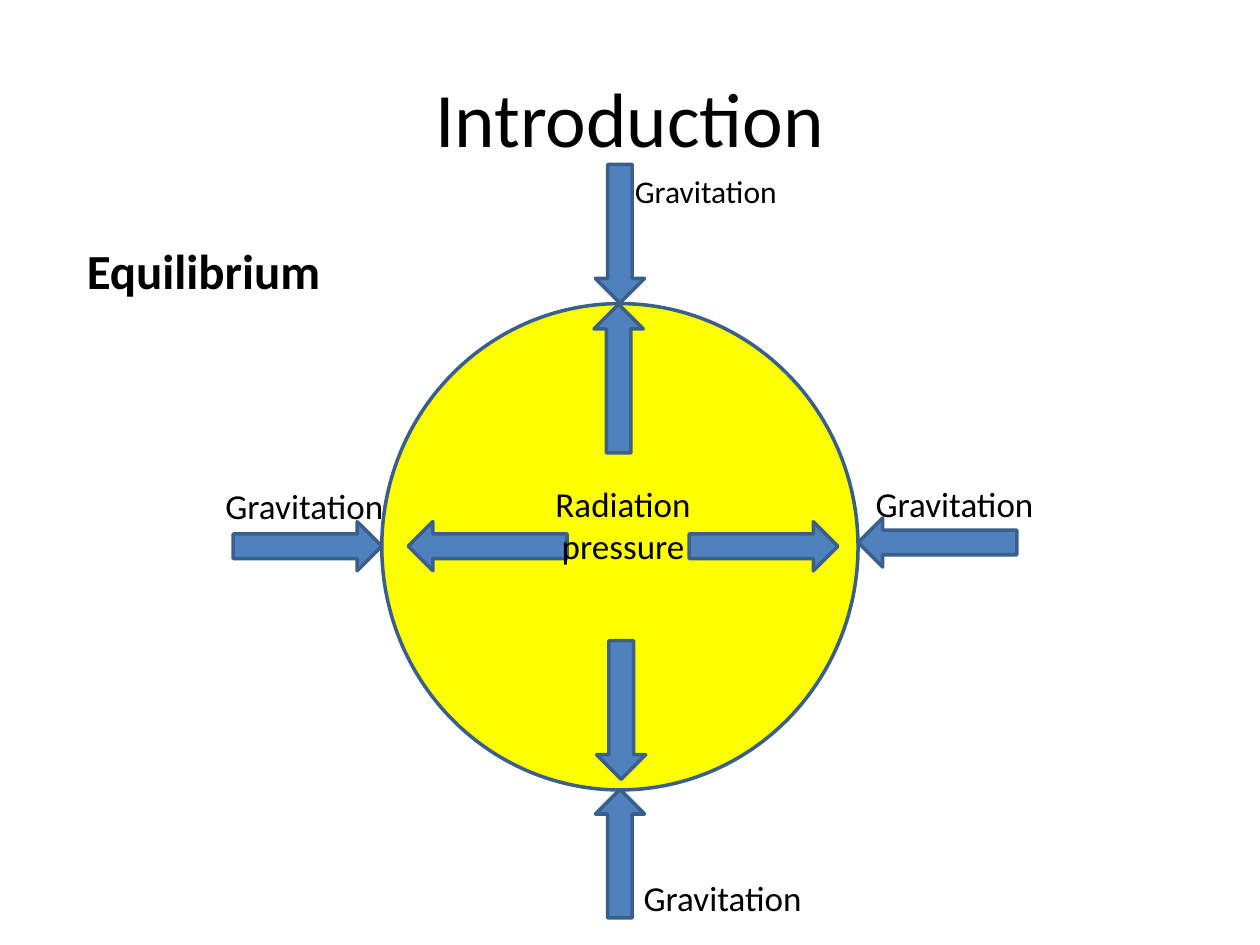
from dataclasses import dataclass

from pptx import Presentation
from pptx.dml.color import RGBColor
from pptx.enum.shapes import MSO_SHAPE as Shape
from pptx.enum.text import MSO_ANCHOR as Anchor, PP_ALIGN as Align
from pptx.util import Inches, Pt

COLORS = {"text": "000000", "star": "FFFF00", "arrow": "4F81BD", "outline": "3A5F8C"}
FONT = "Calibri"
ARROW_THICKNESS = 0.39
LABEL_WIDTH = 1.81


@dataclass
class Arrow:
    left: float
    top: float
    length: float
    rotation: int = 0


@dataclass
class Label:
    text: str
    left: float
    top: float
    width: float = LABEL_WIDTH
    height: float = 0.44
    size: int = 20
    bold: bool = False
    align: Align = Align.LEFT
    anchor: Anchor = Anchor.TOP


GRAVITATION_ARROWS = [
    Arrow(1.85, 4.14, 1.18),
    Arrow(4.41, 6.58, 1.02, 270),
    Arrow(4.37, 1.66, 1.1, 90),
    Arrow(6.81, 4.11, 1.26, 180),
]
RADIATION_ARROWS = [
    Arrow(5.47, 4.14, 1.18),
    Arrow(4.38, 5.44, 1.1, 90),
    Arrow(3.24, 4.14, 1.26, 180),
    Arrow(4.32, 2.81, 1.18, 270),
]
TITLE = Label("Introduction", 0.5, 0.3, 9, 1.25, size=44,
              align=Align.CENTER, anchor=Anchor.MIDDLE)
LABELS = [
    Label("Gravitation", 1.69, 3.8),
    Label("Gravitation", 6.85, 3.78),
    Label("Gravitation", 4.94, 1.32, height=0.4, size=18),
    Label("Gravitation", 5.01, 6.91),
    Label("Radiation pressure", 4.04, 3.78, height=0.77, align=Align.CENTER),
    Label("Equilibrium", 0.59, 1.86, 2.91, 0.57, size=28, bold=True),
]


def color(name: str) -> RGBColor:
    return RGBColor.from_string(COLORS[name])


def add_outlined(slide, kind: Shape, left: float, top: float,
                 width: float, height: float, fill: str):
    shape = slide.shapes.add_shape(
        kind, Inches(left), Inches(top), Inches(width), Inches(height))
    shape.shadow.inherit = False
    shape.fill.solid()
    shape.fill.fore_color.rgb = color(fill)
    shape.line.color.rgb = color("outline")
    shape.line.width = Pt(2)
    return shape


def add_arrow(slide, arrow: Arrow) -> None:
    shape = add_outlined(slide, Shape.RIGHT_ARROW, arrow.left, arrow.top,
                         arrow.length, ARROW_THICKNESS, "arrow")
    shape.rotation = arrow.rotation


def add_label(slide, label: Label) -> None:
    box = slide.shapes.add_textbox(Inches(label.left), Inches(label.top),
                                   Inches(label.width), Inches(label.height))
    frame = box.text_frame
    frame.word_wrap = True
    frame.vertical_anchor = label.anchor
    para = frame.paragraphs[0]
    para.text = label.text
    para.alignment = label.align
    para.font.name = FONT
    para.font.size = Pt(label.size)
    para.font.bold = label.bold
    para.font.color.rgb = color("text")


def main() -> None:
    deck = Presentation()
    deck.slide_width, deck.slide_height = Inches(10), Inches(7.5)
    slide = deck.slides.add_slide(deck.slide_layouts[6])

    add_label(slide, TITLE)
    add_outlined(slide, Shape.OVAL, 3.03, 2.41, 3.78, 3.86, "star")
    for arrow in GRAVITATION_ARROWS + RADIATION_ARROWS:
        add_arrow(slide, arrow)
    for label in LABELS:
        add_label(slide, label)

    deck.save("out.pptx")


if __name__ == "__main__":
    main()
